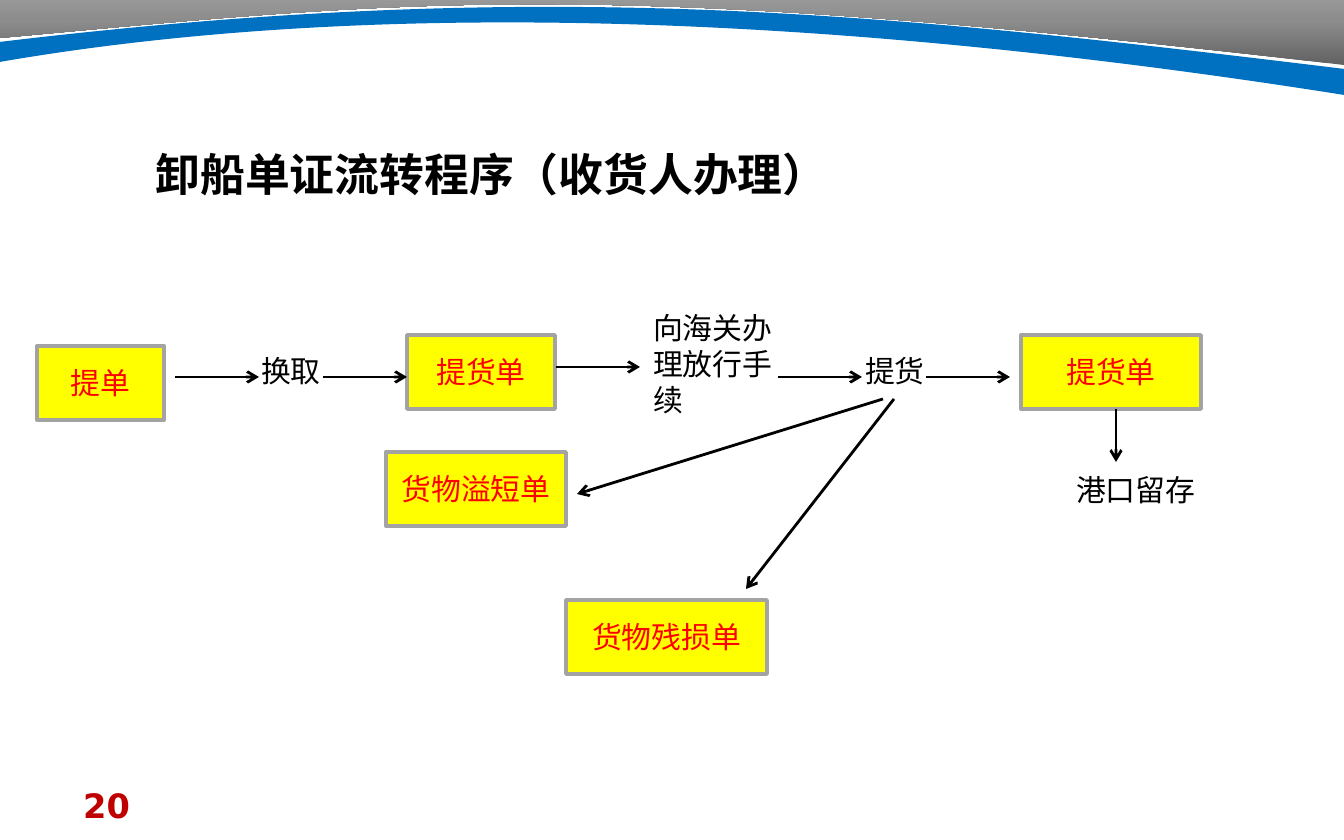
from copy import deepcopy
from lxml import etree
from pptx import Presentation
from pptx import util as u
from pptx.dml.color import RGBColor
from pptx.enum import shapes, text
from pptx.oxml.ns import qn

PX = u.Inches(10) / 1344
COLORS = {
    "ink": "000000", "alert": "FF0000", "number": "C00000",
    "document": "FFFF00", "border": "A3A3A3", "band": "0070C0",
    "steel_dark": "626262", "steel": "8C8C8C", "steel_light": "A6A6A6",
}
CJK, LATIN = "Noto Sans CJK SC", "DejaVu Sans"


def px(length):
    """Turn pixels into EMU."""
    return u.Emu(round(length * PX))


def rgb(name):
    """Look up a palette colour."""
    return RGBColor.from_string(COLORS[name])


def write(shape, wording, size, color, face=CJK, bold=False,
          align=text.PP_ALIGN.LEFT, anchor=text.MSO_ANCHOR.TOP):
    """Put one formatted paragraph into a shape."""
    frame = shape.text_frame
    frame.word_wrap = True
    frame.vertical_anchor = anchor
    frame.text = wording
    paragraph = frame.paragraphs[0]
    paragraph.alignment = align
    font = paragraph.font
    font.size, font.bold, font.name = u.Pt(size), bold, face
    font.color.rgb = rgb(color)
    defaults = paragraph._p.pPr.find(qn("a:defRPr"))
    etree.SubElement(defaults, qn("a:ea"), typeface=face)


def add_outline(slide, left, top, points, curve_starts):
    """Draw a closed outline, bending three segments from each curve start."""
    places = [(px(left + x), px(top + y)) for x, y in points]
    builder = slide.shapes.build_freeform(*places[0], scale=1.0)
    builder.add_line_segments(places[1:], close=True)
    outline = builder.convert_to_shape()
    segments = list(outline._element.spPr.iter(qn("a:lnTo")))
    for start in curve_starts:
        bend = etree.Element(qn("a:cubicBezTo"))
        segments[start].addprevious(bend)
        for segment in segments[start:start + 3]:
            bend.append(segment[0])
            segment.getparent().remove(segment)
    outline.shadow.inherit = False
    outline.line.fill.background()
    return outline


def add_header(slide, left, top, width):
    """Draw the grey and blue swooshes along the top edge."""
    sky = add_outline(slide, left, top, [
        (width, 65), (595, -23), (414, 0), (0, 38),
        (0, -3), (width, -3)], [0])
    sky.fill.gradient()
    sky.fill.gradient_angle = 90
    first, last = sky.fill.gradient_stops
    first.color.rgb, first.position = rgb("steel_dark"), 0
    last.color.rgb, last.position = rgb("steel"), 0.5
    stops = sky._element.spPr.find(qn("a:gradFill")).find(qn("a:gsLst"))
    stops.append(deepcopy(stops[-1]))
    light = sky.fill.gradient_stops[2]
    light.color.rgb, light.position = rgb("steel_light"), 1

    band = add_outline(slide, left, top, [
        (0, 42), (542, -23), (876, 12), (width, 69),
        (width, 95), (813, 11), (359, 0), (0, 62)], [0, 4])
    band.fill.solid()
    band.fill.fore_color.rgb = rgb("band")


def add_title(slide, left, top, width, height):
    """Place the slide title."""
    title = slide.shapes.title
    title.left, title.top, title.width, title.height = map(px, (left, top, width, height))
    write(title, "卸船单证流转程序（收货人办理）", 24, "ink", bold=True)


def add_document(slide, wording, left, top, width, height=74):
    """Draw one yellow document box."""
    document = slide.shapes.add_shape(
        shapes.MSO_SHAPE.RECTANGLE, *map(px, (left, top, width, height)))
    document.shadow.inherit = False
    document.fill.solid()
    document.fill.fore_color.rgb = rgb("document")
    document.line.color.rgb = rgb("border")
    document.line.width = u.Pt(2)
    write(document, wording, 16, "alert", align=text.PP_ALIGN.CENTER,
          anchor=text.MSO_ANCHOR.MIDDLE)


def add_label(slide, wording, left, top, width, height, **style):
    """Place a plain text label."""
    label = slide.shapes.add_textbox(*map(px, (left, top, width, height)))
    write(label, wording, **({"size": 16, "color": "ink"} | style))


def add_arrow(slide, x1, y1, x2, y2):
    """Draw a straight arrow."""
    arrow = slide.shapes.add_connector(
        shapes.MSO_CONNECTOR.STRAIGHT, *map(px, (x1, y1, x2, y2)))
    arrow.line.color.rgb = rgb("ink")
    arrow.line.width = u.Pt(1.5)
    etree.SubElement(arrow.line._get_or_add_ln(), qn("a:tailEnd"), type="arrow")
    etree.SubElement(arrow._element.spPr, qn("a:effectLst"))


def add_flow(slide, left, top):
    """Lay out the document flow from its top left corner."""
    documents = [
        ("提单", 0, 43, 127), ("提货单", 370, 32, 148), ("货物溢短单", 349, 149, 180),
        ("货物残损单", 529, 297, 201), ("提货单", 984, 32, 180),
    ]
    for wording, x, y, width in documents:
        add_document(slide, wording, left + x, top + y, width)

    steps = [
        ("换取", 211, 43, 106, 50), ("向海关办理放行手续", 603, 0, 169, 122),
        ("提货", 815, 43, 106, 50), ("港口留存", 1026, 162, 169, 50),
    ]
    for wording, x, y, width, height in steps:
        add_label(slide, wording, left + x, top + y, width, height)

    onward = [(x, y, x + 84, y) for x, y in
              ((138, 74), (286, 74), (519, 64), (741, 74), (889, 74))]
    branches = [(1079, 106, 1079, 159), (846, 96, 540, 191), (857, 96, 709, 286)]
    for x1, y1, x2, y2 in onward + branches:
        add_arrow(slide, left + x1, top + y1, left + x2, top + y2)


def main():
    """Build and save the slide."""
    deck = Presentation()
    deck.slide_width, deck.slide_height = px(1344), px(840)
    slide = deck.slides.add_slide(deck.slide_layouts[5])
    add_header(slide, 0, 0, 1344)
    add_title(slide, 142, 140, 741, 67)
    add_flow(slide, 37, 303)
    add_label(slide, "20", 70, 778, 313, 44, size=18, color="number",
              face=LATIN, bold=True)
    deck.save("out.pptx")


if __name__ == "__main__":
    main()
